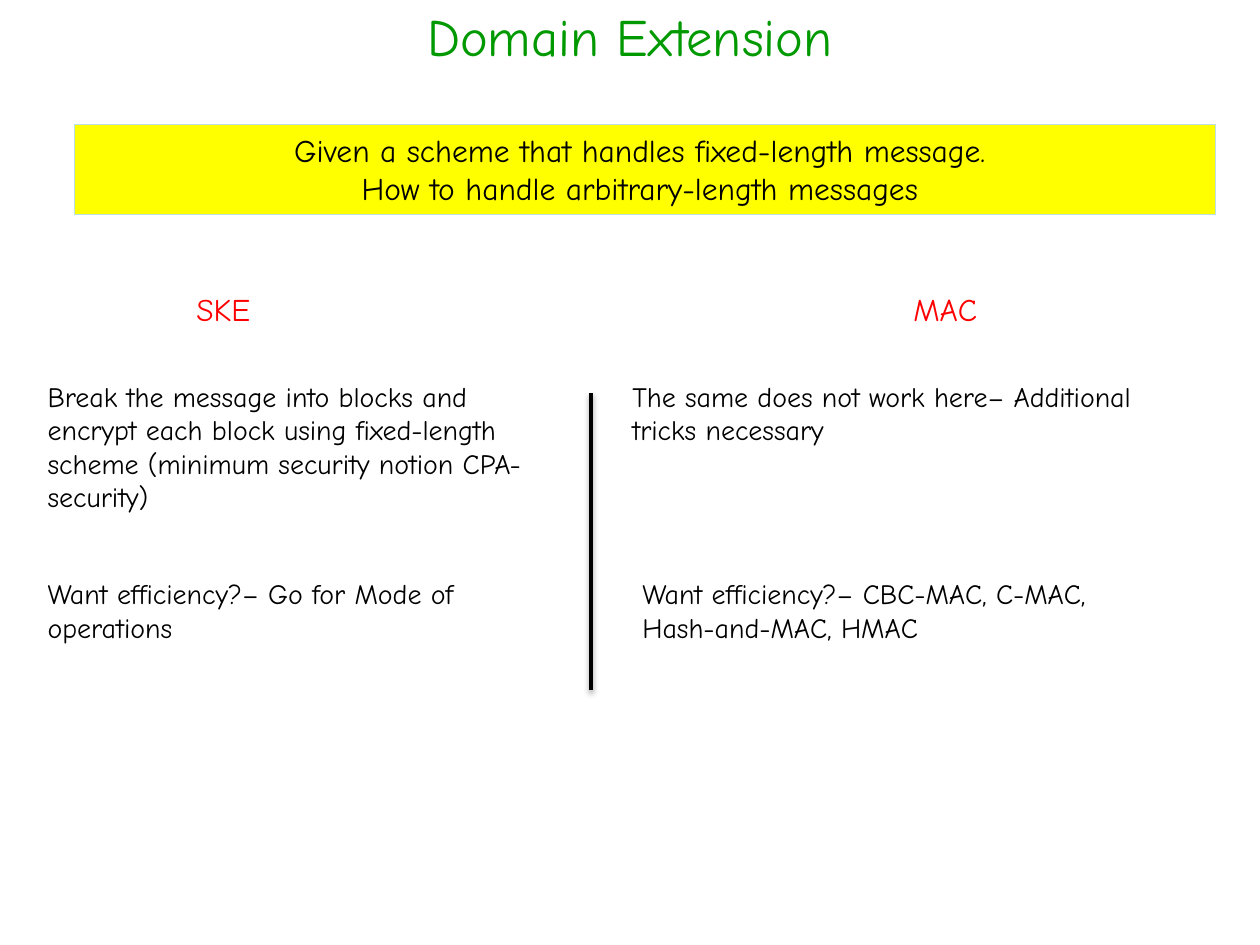
from lxml.etree import SubElement
from pptx import Presentation
from pptx.dml.color import RGBColor
from pptx.enum.shapes import MSO_CONNECTOR as Connector, MSO_SHAPE as Shape
from pptx.enum.text import MSO_ANCHOR as Anchor, PP_ALIGN as Align
from pptx.oxml.ns import qn
from pptx.util import Inches, Pt

FONT = "Comic Neue"
BLACK = RGBColor(0x00, 0x00, 0x00)
GREEN = RGBColor(0x00, 0x99, 0x00)
RED = RGBColor(0xFF, 0x00, 0x00)
YELLOW = RGBColor(0xFF, 0xFF, 0x00)
PALE_BLUE = RGBColor(0xBB, 0xE0, 0xE3)

# Content
TITLE = "Domain Extension"
QUESTION = [
    "Given a scheme that handles fixed-length message. ",
    "How to handle arbitrary-length messages ",
]
HEADING_TOP, HEADING_HEIGHT = 2.25, 0.4
HEADINGS = [("SKE", 1.46, 0.63), ("MAC", 7.15, 0.72)]  # text, left, width
# Each row: top, then (text, left, width, height) per column
ROWS = [
    (2.96, [
        ("Break the message into blocks and encrypt each block using "
         "fixed-length scheme (minimum security notion CPA-security)", 0.28, 4.17, 1.18),
        ("The same does not work here– Additional tricks necessary", 4.92, 4.72, 0.64),
    ]),
    (4.53, [
        ("Want efficiency?– Go for Mode of operations", 0.28, 4.17, 0.64),
        ("Want efficiency?– CBC-MAC, C-MAC, Hash-and-MAC, HMAC", 5, 4.17, 0.64),
    ]),
]
DIVIDER_X, DIVIDER_TOP, DIVIDER_BOTTOM = 4.69, 3.12, 5.48


def write(box, lines, size=16, color=BLACK, align=Align.LEFT, anchor=Anchor.TOP, wrap=True):
    frame = box.text_frame
    frame.word_wrap = wrap
    frame.vertical_anchor = anchor
    for index, line in enumerate(lines):
        para = frame.add_paragraph() if index else frame.paragraphs[0]
        para.alignment = align
        span = para.add_run()
        span.text = line
        span.font.name = FONT
        span.font.size = Pt(size)
        span.font.color.rgb = color


def add_text(page, text, left, top, width, height, **style):
    box = page.shapes.add_textbox(Inches(left), Inches(top), Inches(width), Inches(height))
    write(box, [text], **style)


def add_shadow(line, blur=3.1, distance=1.6, angle=90, opacity=38):
    effects = SubElement(line._element.spPr, qn("a:effectLst"))
    shadow = SubElement(effects, qn("a:outerShdw"), blurRad=str(Pt(blur)),
                        dist=str(Pt(distance)), dir=str(angle * 60000), rotWithShape="0")
    tint = SubElement(shadow, qn("a:srgbClr"), val=str(BLACK))
    SubElement(tint, qn("a:alpha"), val=str(opacity * 1000))


deck = Presentation()
deck.slide_width, deck.slide_height = Inches(10), Inches(7.5)
page = deck.slides.add_slide(deck.slide_layouts[6])

# Title
add_text(page, TITLE, 0, -0.03, 10, 0.63, size=30, color=GREEN,
         align=Align.CENTER, anchor=Anchor.MIDDLE)

# Divider between the columns
divider = page.shapes.add_connector(
    Connector.STRAIGHT, Inches(DIVIDER_X), Inches(DIVIDER_TOP),
    Inches(DIVIDER_X), Inches(DIVIDER_BOTTOM))
divider.line.color.rgb = BLACK
divider.line.width = Pt(2)
add_shadow(divider)

# Question banner
banner = page.shapes.add_shape(
    Shape.RECTANGLE, Inches(0.59), Inches(0.99), Inches(9.06), Inches(0.71))
banner.shadow.inherit = False
banner.fill.solid()
banner.fill.fore_color.rgb = YELLOW
banner.line.color.rgb = PALE_BLUE
banner.line.width = Pt(0.75)
write(banner, QUESTION, size=18, align=Align.CENTER)

# Column headings
for text, left, width in HEADINGS:
    add_text(page, text, left, HEADING_TOP, width, HEADING_HEIGHT,
             size=18, color=RED, wrap=False)

# Column text
for top, cells in ROWS:
    for text, left, width, height in cells:
        add_text(page, text, left, top, width, height)

deck.save("out.pptx")
